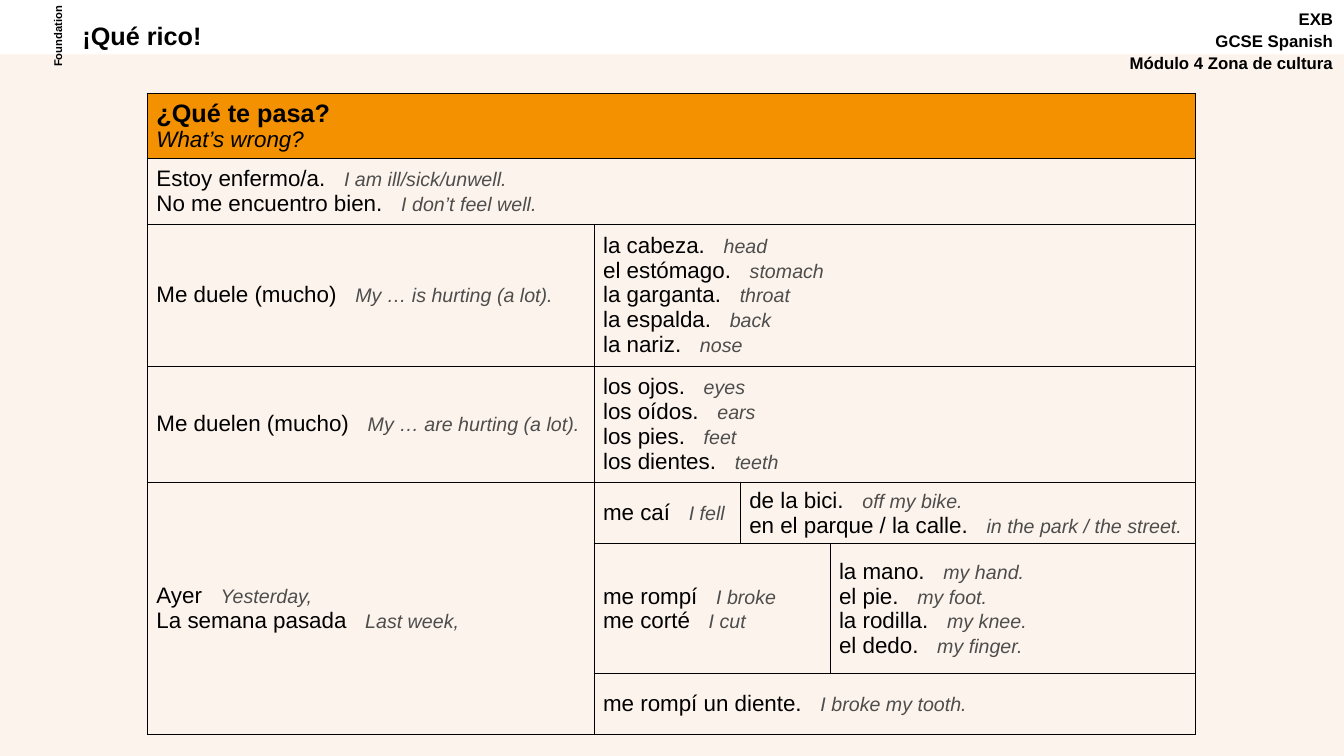
import pptx
import pptx.dml.color
import pptx.enum.shapes
import pptx.enum.text
import pptx.util
from lxml import etree
from pptx.oxml.ns import qn

RGBColor = pptx.dml.color.RGBColor
BLACK = RGBColor(0x00, 0x00, 0x00)
GREY = RGBColor(0x4D, 0x4D, 0x4C)
ORANGE = RGBColor(0xF3, 0x91, 0x00)
CREAM = RGBColor(0xFD, 0xF3, 0xED)

FONT = "Arial"
SLIDE_WIDTH = pptx.util.Inches(13.33)
SLIDE_HEIGHT = pptx.util.Inches(7.5)

# Shares of the slide's width and height, in percent
COLUMNS = [33.23, 10.88, 6.68, 27.23]
ROWS = [8.13, 8.67, 17.73, 14.4, 7.73, 17.2, 8]

HEADING = ("¿Qué te pasa?", "What’s wrong?")

# (first row, first column, last row, last column): Spanish and English pairs
VOCABULARY = {
    (1, 0, 1, 3): [("Estoy enfermo/a.", "I am ill/sick/unwell."),
                   ("No me encuentro bien.", "I don’t feel well.")],
    (2, 0, 2, 0): [("Me duele (mucho)", "My … is hurting (a lot).")],
    (2, 1, 2, 3): [("la cabeza.", "head"),
                   ("el estómago.", "stomach"),
                   ("la garganta.", "throat"),
                   ("la espalda.", "back"),
                   ("la nariz.", "nose")],
    (3, 0, 3, 0): [("Me duelen (mucho)", "My … are hurting (a lot).")],
    (3, 1, 3, 3): [("los ojos.", "eyes"),
                   ("los oídos.", "ears"),
                   ("los pies.", "feet"),
                   ("los dientes.", "teeth")],
    (4, 0, 6, 0): [("Ayer", "Yesterday,"),
                   ("La semana pasada", "Last week,")],
    (4, 1, 4, 1): [("me caí", "I fell")],
    (4, 2, 4, 3): [("de la bici.", "off my bike."),
                   ("en el parque / la calle.", "in the park / the street.")],
    (5, 1, 5, 2): [("me rompí", "I broke"),
                   ("me corté", "I cut")],
    (5, 3, 5, 3): [("la mano.", "my hand."),
                   ("el pie.", "my foot."),
                   ("la rodilla.", "my knee."),
                   ("el dedo.", "my finger.")],
    (6, 1, 6, 3): [("me rompí un diente.", "I broke my tooth.")],
}


def across(percent):
    return round(SLIDE_WIDTH * percent / 100)


def down(percent):
    return round(SLIDE_HEIGHT * percent / 100)


def set_font(font, size, color=BLACK, bold=False, italic=False):
    font.name = FONT
    font.size = pptx.util.Pt(size)
    font.color.rgb = color
    font.bold = bold
    font.italic = italic


def add_backdrop(slide):
    top = down(7.2)
    backdrop = slide.shapes.add_shape(
        pptx.enum.shapes.MSO_SHAPE.RECTANGLE,
        0, top, SLIDE_WIDTH, SLIDE_HEIGHT - top)
    backdrop.shadow.inherit = False
    backdrop.fill.solid()
    backdrop.fill.fore_color.rgb = CREAM
    backdrop.line.fill.background()


def add_label(slide, lines, left, top, width, height, size, align,
              line_spacing=1.0, rotation=0):
    label = slide.shapes.add_textbox(
        across(left), down(top), across(width), down(height))
    label.rotation = rotation
    frame = label.text_frame
    frame.word_wrap = True
    frame.text = "\n".join(lines)
    for paragraph in frame.paragraphs:
        paragraph.alignment = align
        paragraph.line_spacing = line_spacing
        set_font(paragraph.font, size, bold=True)


def add_borders(cell):
    properties = cell._tc.get_or_add_tcPr()
    for side in ("a:lnL", "a:lnR", "a:lnT", "a:lnB"):
        border = etree.SubElement(properties, qn(side),
                                  w=str(pptx.util.Pt(0.75)))
        fill = etree.SubElement(border, qn("a:solidFill"))
        etree.SubElement(fill, qn("a:srgbClr"), val=str(BLACK))


def cell_paragraphs(cell, count):
    frame = cell.text_frame
    for _ in range(count - 1):
        frame.add_paragraph()
    return frame.paragraphs


def fill_heading(cell):
    cell.fill.solid()
    cell.fill.fore_color.rgb = ORANGE
    spanish, english = cell_paragraphs(cell, 2)
    spanish.text, english.text = HEADING
    set_font(spanish.font, 18, bold=True)
    set_font(english.font, 16, italic=True)


def add_pair(paragraph, spanish, english):
    """Write a phrase and its translation, parted by one widened space."""
    phrase, gap, translation = (paragraph.add_run() for _ in range(3))
    phrase.text, gap.text, translation.text = spanish, " ", english
    set_font(phrase.font, 16)
    set_font(gap.font, 16)
    gap._r.get_or_add_rPr().set("spc", "890")
    set_font(translation.font, 14, GREY, italic=True)


def add_vocabulary_table(slide):
    table = slide.shapes.add_table(
        len(ROWS), len(COLUMNS), across(10.97), down(12.35),
        across(sum(COLUMNS)), down(sum(ROWS))).table
    table.first_row = False
    table.horz_banding = False
    for column, share in zip(table.columns, COLUMNS):
        column.width = across(share)
    for row, share in zip(table.rows, ROWS):
        row.height = down(share)
    for cell in table.iter_cells():
        add_borders(cell)
        cell.fill.background()
        cell.vertical_anchor = pptx.enum.text.MSO_ANCHOR.MIDDLE
        cell.margin_left = cell.margin_right = pptx.util.Inches(0.09)
        cell.margin_top = cell.margin_bottom = pptx.util.Inches(0.04)

    heading = table.cell(0, 0)
    heading.merge(table.cell(0, len(COLUMNS) - 1))
    fill_heading(heading)

    for (top, left, bottom, right), pairs in VOCABULARY.items():
        cell = table.cell(top, left)
        if (top, left) != (bottom, right):
            cell.merge(table.cell(bottom, right))
        for paragraph, pair in zip(cell_paragraphs(cell, len(pairs)), pairs):
            add_pair(paragraph, *pair)


def main():
    presentation = pptx.Presentation()
    presentation.slide_width = SLIDE_WIDTH
    presentation.slide_height = SLIDE_HEIGHT
    slide = presentation.slides.add_slide(presentation.slide_layouts[6])
    align = pptx.enum.text.PP_ALIGN

    add_backdrop(slide)
    add_label(slide, ["EXB", "GCSE Spanish", "Módulo 4 Zona de cultura"],
              77.5, 0.27, 22.43, 10.27, 12, align.RIGHT, line_spacing=1.09)
    add_label(slide, ["¡Qué rico!"], 5.4, 2.53, 51.6, 5.73, 18, align.LEFT,
              line_spacing=0.9)
    add_label(slide, ["Foundation"], 1.13, 3.07, 6.53, 3.47, 8, align.CENTER,
              rotation=270)
    add_vocabulary_table(slide)
    presentation.save("out.pptx")


if __name__ == "__main__":
    main()
